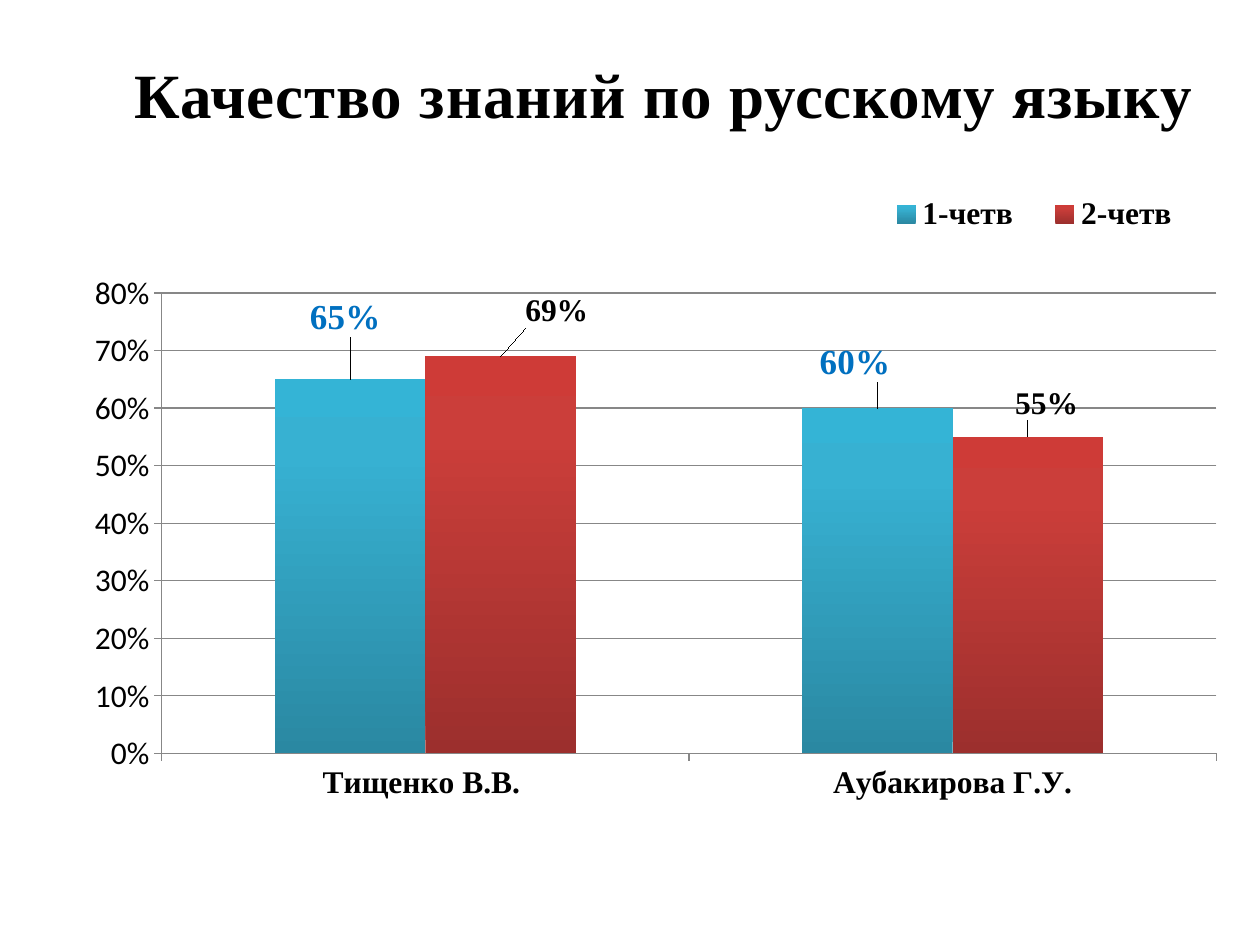
from dataclasses import dataclass

from lxml import etree
from pptx import Presentation
from pptx import util as u
from pptx.chart import data as chart_data
from pptx.dml.color import RGBColor
from pptx.enum import chart as chart_enum
from pptx.enum import text
from pptx.oxml import ns, parse_xml

PX = u.Inches(1) // 126
SERIF, SANS = "Times New Roman", "Calibri"
BLACK = RGBColor(0x00, 0x00, 0x00)
BLUE = RGBColor(0x00, 0x70, 0xC0)
GRAY = RGBColor(0x87, 0x87, 0x87)
TEAL_STOPS = (
    (0, RGBColor(0x2A, 0x88, 0xA2)),
    (80, RGBColor(0x37, 0xB1, 0xD2)),
    (100, RGBColor(0x34, 0xB4, 0xD6)),
)
RED_STOPS = (
    (0, RGBColor(0x9C, 0x2F, 0x2D)),
    (80, RGBColor(0xCB, 0x3E, 0x3A)),
    (100, RGBColor(0xCE, 0x3B, 0x37)),
)
CHART_WIDTH, CHART_HEIGHT = 1168, 738


@dataclass(frozen=True)
class Quarter:
    name: str
    values: tuple[float, ...]
    stops: tuple[tuple[int, RGBColor], ...]
    label_size: int
    label_color: RGBColor
    label_shifts: tuple[tuple[int, int], ...]


TEACHERS = ("Тищенко В.В. ", "Аубакирова Г.У.")
QUARTERS = (
    Quarter("1-четв", (0.65, 0.6), TEAL_STOPS, 20, BLUE, ((-5, -37), (-22, -21))),
    Quarter("2-четв", (0.69, 0.55), RED_STOPS, 18, BLACK, ((56, -23), (19, -11))),
)


def style_font(font, name: str, size: int, color: RGBColor, bold: bool) -> None:
    font.name = name
    font.size = u.Pt(size)
    font.bold = bold
    font.color.rgb = color


def manual_layout(**settings):
    layout = etree.Element(ns.qn("c:layout"), nsmap={"c": ns.nsuri("c")})
    manual = etree.SubElement(layout, ns.qn("c:manualLayout"))
    for name, value in settings.items():
        etree.SubElement(manual, ns.qn(f"c:{name}")).set("val", str(value))
    return layout


def fill_gradient(series, stops: tuple[tuple[int, RGBColor], ...]) -> None:
    stop_xml = "".join(
        f'<a:gs pos="{position * 1000}"><a:srgbClr val="{color}"/></a:gs>'
        for position, color in stops
    )
    gradient = parse_xml(
        f'<a:gradFill {ns.nsdecls("a")} rotWithShape="1"><a:gsLst>{stop_xml}</a:gsLst>'
        '<a:lin ang="16200000" scaled="0"/></a:gradFill>'
    )
    series.format.line.fill.background()
    series._element.spPr.insert(0, gradient)


def style_labels(series, quarter: Quarter) -> None:
    outside = chart_enum.XL_LABEL_POSITION.OUTSIDE_END
    labels = series.data_labels
    labels.show_value = True
    labels.number_format = "0%"
    labels.number_format_is_linked = False
    labels.position = outside
    style_font(labels.font, SERIF, quarter.label_size, quarter.label_color, True)
    for index, (left, top) in enumerate(quarter.label_shifts):
        label = series.points[index].data_label
        style_font(label.font, SERIF, quarter.label_size, quarter.label_color, True)
        label.position = outside
        shift = manual_layout(
            x=round(left / CHART_WIDTH, 3), y=round(top / CHART_HEIGHT, 3)
        )
        labels._element.findall(ns.qn("c:dLbl"))[index].insert(1, shift)


def style_axes(chart) -> None:
    category_axis, value_axis = chart.category_axis, chart.value_axis
    style_font(category_axis.tick_labels.font, SERIF, 18, BLACK, True)
    style_font(value_axis.tick_labels.font, SANS, 18, BLACK, False)
    value_axis.minimum_scale = 0
    value_axis.maximum_scale = 0.8
    value_axis.major_unit = 0.1
    value_axis.tick_labels.number_format = "0%"
    value_axis.tick_labels.number_format_is_linked = False
    value_axis.has_major_gridlines = True
    for axis in (category_axis, value_axis):
        axis.major_tick_mark = chart_enum.XL_TICK_MARK.OUTSIDE
    for line_owner in (category_axis, value_axis, value_axis.major_gridlines):
        line_owner.format.line.color.rgb = GRAY
        line_owner.format.line.width = u.Pt(0.75)


def add_quality_chart(slide) -> None:
    quality = chart_data.CategoryChartData(number_format="0%")
    quality.categories = TEACHERS
    for quarter in QUARTERS:
        quality.add_series(quarter.name, quarter.values)
    chart = slide.shapes.add_chart(
        chart_enum.XL_CHART_TYPE.COLUMN_CLUSTERED,
        59 * PX, 155 * PX, CHART_WIDTH * PX, CHART_HEIGHT * PX, quality,
    ).chart
    chart.has_title = False
    style_font(chart.font, SANS, 18, BLACK, False)
    plot = chart.plots[0]
    plot.gap_width = 150
    plot.overlap = 0
    plot.vary_by_categories = False
    for series, quarter in zip(plot.series, QUARTERS):
        fill_gradient(series, quarter.stops)
        style_labels(series, quarter)
    style_axes(chart)

    plot_area = chart._chartSpace.chart.plotArea
    for old_layout in plot_area.findall(ns.qn("c:layout")):
        plot_area.remove(old_layout)
    plot_area.insert(0, manual_layout(
        layoutTarget="inner", xMode="edge", yMode="edge",
        x=0.088, y=0.187, w=0.903, h=0.624,
    ))

    chart.has_legend = True
    legend = chart.legend
    legend.position = chart_enum.XL_LEGEND_POSITION.RIGHT
    legend.include_in_layout = False
    style_font(legend.font, SERIF, 18, BLACK, True)
    for old_layout in legend._element.findall(ns.qn("c:layout")):
        legend._element.remove(old_layout)
    legend._element.find(ns.qn("c:legendPos")).addnext(manual_layout(
        xMode="edge", yMode="edge", x=0.69, y=0.04, w=0.29, h=0.08,
    ))


def add_title(slide) -> None:
    box = slide.shapes.add_textbox(59 * PX, 49 * PX, 1210 * PX, 89 * PX)
    frame = box.text_frame
    frame.text = "Качество знаний по русскому языку"
    frame.word_wrap = True
    frame.auto_size = text.MSO_AUTO_SIZE.SHAPE_TO_FIT_TEXT
    paragraph = frame.paragraphs[0]
    paragraph.alignment = text.PP_ALIGN.CENTER
    run = paragraph.runs[0]
    style_font(run.font, SERIF, 36, BLACK, True)
    run._r.get_or_add_rPr().set("spc", "50")


def main() -> None:
    presentation = Presentation()
    presentation.slide_width = u.Inches(10)
    presentation.slide_height = u.Inches(7.5)
    slide = presentation.slides.add_slide(presentation.slide_layouts[6])
    add_quality_chart(slide)
    add_title(slide)
    presentation.save("out.pptx")


if __name__ == "__main__":
    main()
